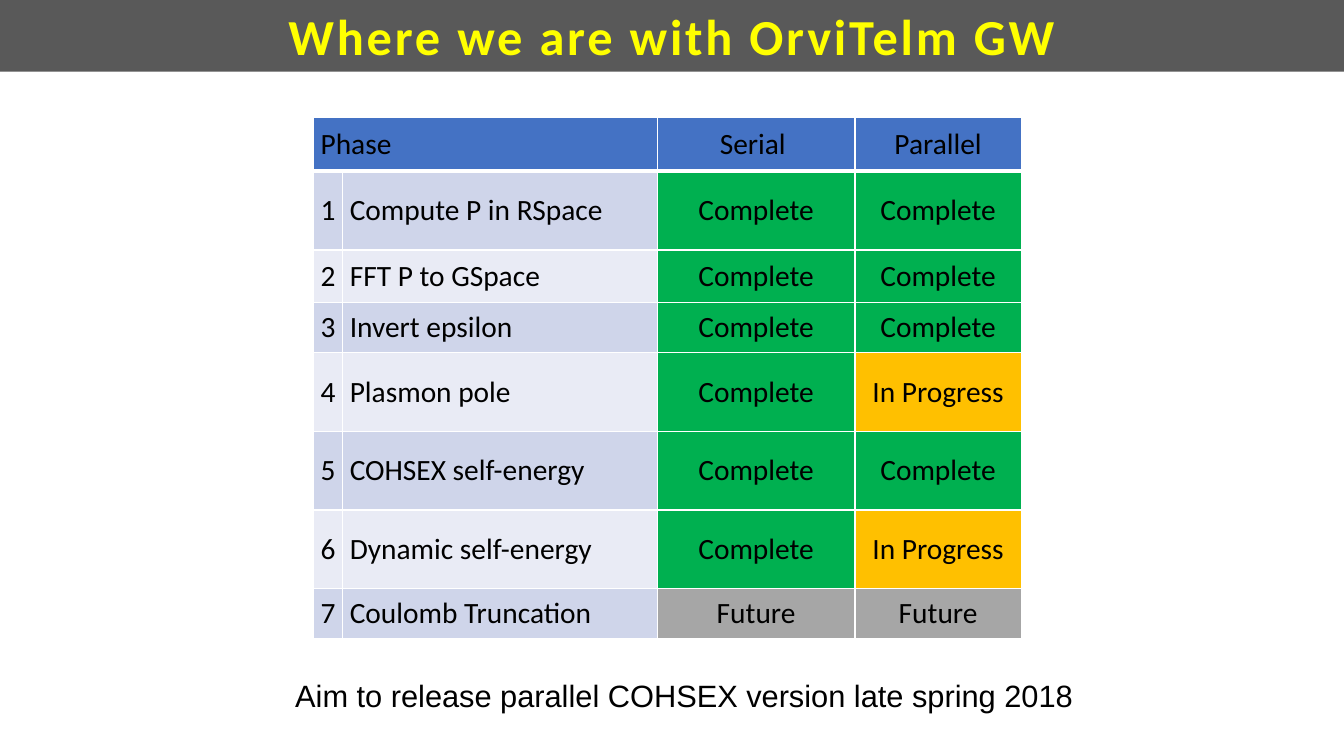
"""Build the slide with the phase status table of OrviTelm GW."""
import pptx
import pptx.dml.color
import pptx.enum.text
import pptx.oxml
import pptx.oxml.ns
import pptx.util
from pptx.util import Inches

HUES = {
    "bar": "595959", "title": "FFFF00", "head": "4472C4", "odd": "CFD5EA",
    "even": "E9EBF5", "line": "FFFFFF", "text": "000000",
    "Complete": "00B050", "In Progress": "FFC000", "Future": "A6A6A6",
}
ALIGN = pptx.enum.text.PP_ALIGN
MIDDLE = pptx.enum.text.MSO_ANCHOR.MIDDLE


def paint(fill, hue):
    fill.solid()
    fill.fore_color.rgb = pptx.dml.color.RGBColor.from_string(HUES[hue])


def write(frame, text, size, face, hue, align):
    para = frame.paragraphs[0]
    para.alignment = align
    run = para.add_run()
    run.text = text
    run.font.size = pptx.util.Pt(size)
    run.font.name = face
    paint(run.font.fill, hue)
    return run


deck = pptx.Presentation()
deck.slide_width, deck.slide_height = Inches(13.33), Inches(7.5)
slide = deck.slides.add_slide(deck.slide_layouts[5])

title = slide.shapes.title
title.left, title.top = 0, 0
title.width, title.height = Inches(13.33), Inches(0.71)
paint(title.fill, "bar")
title.text_frame.auto_size = pptx.enum.text.MSO_AUTO_SIZE.NONE
title.text_frame.vertical_anchor = MIDDLE
run = write(title.text_frame, "Where we are with OrviTelm GW", 36, "Calibri",
            "title", ALIGN.CENTER)
run.font.bold = True
run.font._element.set("spc", "200")

rows = [
    ("Phase", "", "Serial ", "Parallel"),
    ("1", "Compute P in RSpace", "Complete", "Complete"),
    ("2", "FFT P to GSpace", "Complete", "Complete"),
    ("3", "Invert epsilon", "Complete", "Complete"),
    ("4", "Plasmon pole", "Complete", "In Progress"),
    ("5", "COHSEX self-energy", "Complete", "Complete"),
    ("6", "Dynamic self-energy", "Complete", "In Progress"),
    ("7", "Coulomb Truncation", "Future", "Future"),
]
wides = [0.29, 3.12, 1.96, 1.65]
highs = [0.54, 0.78, 0.52, 0.5, 0.78, 0.78, 0.78, 0.5]
grid = slide.shapes.add_table(len(rows), len(wides), Inches(3.11), Inches(1.16),
                              Inches(sum(wides)), Inches(sum(highs))).table
for col, wide in zip(grid.columns, wides):
    col.width = Inches(wide)
for row, high in zip(grid.rows, highs):
    row.height = Inches(high)
grid.cell(0, 0).merge(grid.cell(0, 1))

for r, texts in enumerate(rows):
    band = "head" if r == 0 else "odd" if r % 2 else "even"
    for c, text in enumerate(texts):
        cell = grid.cell(r, c)
        cell.vertical_anchor = MIDDLE
        cell.margin_left = cell.margin_right = Inches(0.07)
        cell.margin_top = cell.margin_bottom = Inches(0.04)
        for side in "LRTB":
            width = pptx.util.Pt(3 if r == 0 and side == "B" else 1)
            cell._tc.get_or_add_tcPr().append(pptx.oxml.parse_xml(
                f'<a:ln{side} {pptx.oxml.ns.nsdecls("a")} w="{width}"><a:solidFill>'
                f'<a:srgbClr val="{HUES["line"]}"/></a:solidFill></a:ln{side}>'))
        paint(cell.fill, text if c > 1 and r else band)
        if text:
            write(cell.text_frame, text, 21, "Calibri", "text",
                  ALIGN.CENTER if c > 1 else ALIGN.LEFT)

note = slide.shapes.add_textbox(Inches(2.83), Inches(6.66), Inches(8.5), Inches(0.47))
paint(note.fill, "line")
note.text_frame.word_wrap = True
write(note.text_frame, "Aim to release parallel COHSEX version late spring 2018",
      22, "Arial", "text", ALIGN.LEFT)

deck.save("out.pptx")
